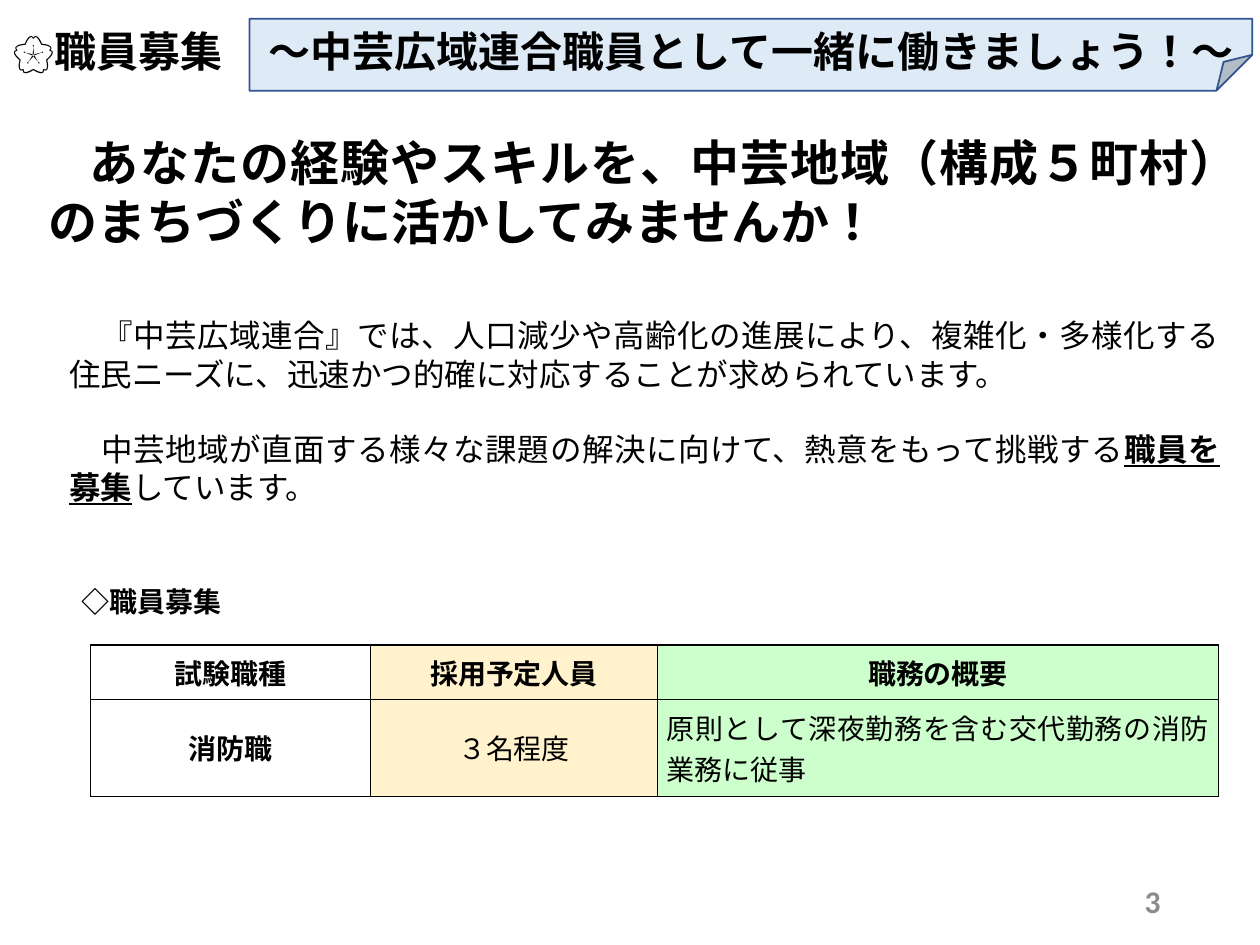
from lxml import etree
from pptx import Presentation
from pptx.dml.color import RGBColor
from pptx.enum import lang, shapes, text
from pptx.oxml import ns
from pptx.util import Inches, Pt

BLACK = RGBColor(0x00, 0x00, 0x00)
GRAY = RGBColor(0x8C, 0x8C, 0x8C)
PALE_BLUE = RGBColor(0xDE, 0xEB, 0xF7)
NAVY = RGBColor(0x32, 0x54, 0x91)
CREAM = RGBColor(0xFF, 0xF2, 0xCC)
MINT = RGBColor(0xCC, 0xFF, 0xCC)
JAPANESE_FONT = "Noto Sans CJK JP"
LEFT, CENTER, RIGHT, JUSTIFY = (
    text.PP_ALIGN.LEFT, text.PP_ALIGN.CENTER, text.PP_ALIGN.RIGHT, text.PP_ALIGN.JUSTIFY)

BOLD = {"bold": True}
TITLE = [[("🌸", {"font": "Karla"}), ("職員募集", {"font": JAPANESE_FONT, "bold": True})]]
BANNER = [[("～中芸広域連合職員として一緒に働きましょう！～", BOLD)]]
MESSAGE = [
    [("　『中芸広域連合』では、人口減少や高齢化の進展により、複雑化・多様化する住民ニーズに、"
      "迅速かつ的確に対応することが求められています。", {})],
    [("　中芸地域が直面する様々な課題の解決に向けて、熱意をもって挑戦する", {}),
     ("職員を募集", {"bold": True, "underline": True}),
     ("しています。", {})],
]
HEADLINE = [[(" あなたの経験やスキルを、中芸地域（構成５町村）のまちづくりに活かしてみませんか！", BOLD)]]
PAGE_NUMBER = [[("3", {"font": "Calibri", "bold": True, "color": GRAY})]]
TABLE_LABEL = [[("◇職員募集", BOLD)]]

COLUMN_WIDTHS = [2.22, 2.28, 4.45]
COLUMN_FILLS = [None, CREAM, MINT]
ROW_HEIGHTS = [0.43, 0.77]
JOBS = [
    [("試験職種", True, CENTER), ("採用予定人員", True, CENTER), ("職務の概要", True, CENTER)],
    [("消防職", True, CENTER), ("３名程度", False, CENTER),
     ("原則として深夜勤務を含む交代勤務の消防業務に従事", False, JUSTIFY)],
]


def add_run(paragraph, words, size, font="Arial", bold=False, underline=False, color=BLACK):
    run = paragraph.add_run()
    run.text = words
    run.font.name = font
    run.font.size = Pt(size)
    run.font.bold = bold
    run.font.underline = underline
    run.font.color.rgb = color
    run.font.language_id = lang.MSO_LANGUAGE_ID.JAPANESE
    latin = run.font._element.find(ns.qn("a:latin"))
    east_asian = etree.Element(ns.qn("a:ea"), typeface=JAPANESE_FONT)
    latin.addnext(east_asian)


def write(frame, paragraphs, size, align, gap=0):
    frame.word_wrap = True
    for index, runs in enumerate(paragraphs):
        paragraph = frame.add_paragraph() if index else frame.paragraphs[0]
        paragraph.alignment = align
        paragraph.line_spacing = Pt(round(size * 1.21, 1))
        if index:
            paragraph.space_before = Pt(gap)
        for words, style in runs:
            add_run(paragraph, words, size, **style)


def add_text(slide, place, paragraphs, size, align, gap=0):
    box = slide.shapes.add_textbox(*map(Inches, place))
    write(box.text_frame, paragraphs, size, align, gap)
    return box.text_frame


def add_banner(slide):
    banner = slide.shapes.add_shape(
        shapes.MSO_SHAPE.FOLDED_CORNER, *map(Inches, (1.98, 0.15, 7.96, 0.57)))
    geometry = banner._element.spPr.find(ns.qn("a:prstGeom"))
    fold = geometry.find(ns.qn("a:avLst"))
    if fold is None:
        fold = etree.SubElement(geometry, ns.qn("a:avLst"))
    etree.SubElement(fold, ns.qn("a:gd"), name="adj", fmla="val 50000")
    banner.shadow.inherit = False
    banner.fill.solid()
    banner.fill.fore_color.rgb = PALE_BLUE
    banner.line.color.rgb = NAVY
    banner.line.width = Pt(1)
    banner.text_frame.vertical_anchor = text.MSO_ANCHOR.TOP
    write(banner.text_frame, BANNER, 24, CENTER)


def add_borders(cell):
    properties = cell._tc.get_or_add_tcPr()
    for position, side in enumerate(("lnL", "lnR", "lnT", "lnB")):
        line = etree.Element(ns.qn(f"a:{side}"), w=str(Pt(1)))
        solid = etree.SubElement(line, ns.qn("a:solidFill"))
        etree.SubElement(solid, ns.qn("a:srgbClr"), val=str(BLACK))
        properties.insert(position, line)


def add_jobs_table(slide):
    table = slide.shapes.add_table(
        len(JOBS), len(COLUMN_WIDTHS), Inches(0.72), Inches(5.12),
        Inches(sum(COLUMN_WIDTHS)), Inches(sum(ROW_HEIGHTS))).table
    for column, width in zip(table.columns, COLUMN_WIDTHS):
        column.width = Inches(width)
    for row, height, job in zip(table.rows, ROW_HEIGHTS, JOBS):
        row.height = Inches(height)
        for cell, fill, (words, bold, align) in zip(row.cells, COLUMN_FILLS, job):
            if fill is None:
                cell.fill.background()
            else:
                cell.fill.solid()
                cell.fill.fore_color.rgb = fill
            cell.margin_left = cell.margin_right = Inches(0.07)
            cell.margin_top = cell.margin_bottom = 0
            cell.vertical_anchor = text.MSO_ANCHOR.MIDDLE
            paragraph = cell.text_frame.paragraphs[0]
            paragraph.alignment = align
            add_run(paragraph, words, 16, bold=bold)
            add_borders(cell)


def main():
    deck = Presentation()
    deck.slide_width, deck.slide_height = Inches(10), Inches(7.5)
    slide = deck.slides.add_slide(deck.slide_layouts[6])
    add_text(slide, (0, 0.15, 5, 0.5), TITLE, 24, JUSTIFY)
    add_banner(slide)
    add_text(slide, (0.45, 2.46, 9.33, 1.62), MESSAGE, 18, JUSTIFY, gap=21)
    headline = add_text(slide, (0.29, 1, 9.65, 1.04), HEADLINE, 28, JUSTIFY)
    headline.paragraphs[0]._p.get_or_add_pPr().set("indent", str(Inches(0.22)))
    page_number = add_text(slide, (7.06, 6.95, 2.25, 0.4), PAGE_NUMBER, 18, RIGHT)
    page_number.vertical_anchor = text.MSO_ANCHOR.MIDDLE
    add_text(slide, (0.55, 4.59, 1.95, 0.37), TABLE_LABEL, 16, LEFT)
    add_jobs_table(slide)
    deck.save("out.pptx")


if __name__ == "__main__":
    main()
